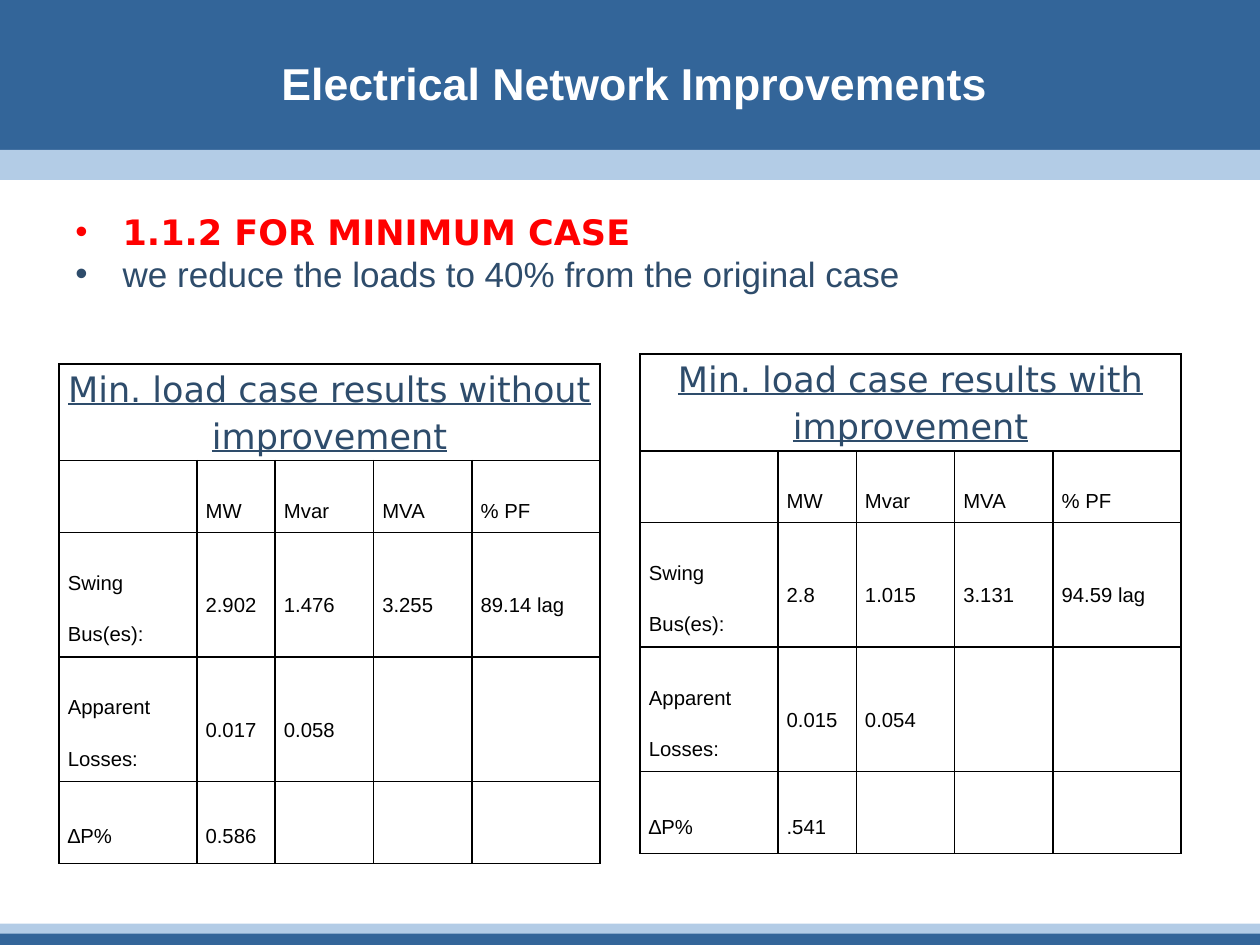
from lxml.etree import SubElement
from pptx import Presentation
from pptx.dml.color import RGBColor
from pptx.enum.shapes import MSO_SHAPE
from pptx.enum.text import MSO_ANCHOR, MSO_AUTO_SIZE, PP_ALIGN
from pptx.oxml.ns import qn
from pptx.util import Pt

COLORS = {
    "band": "336599",
    "stripe": "B3CCE6",
    "white": "FFFFFF",
    "alert": "FF0000",
    "navy": "2E4C6B",
    "black": "000000",
}
TITLE_FONT = {"name": "Arial", "size": Pt(44), "bold": True}
HEADING_FONT = {"name": "DejaVu Sans", "size": Pt(20), "bold": True}
BODY_FONT = {"name": "Arial", "size": Pt(20), "bold": False}
CAPTION_FONT = {"name": "DejaVu Sans", "size": Pt(20), "bold": False, "underline": True}
CELL_FONT = {"name": "Arial", "size": Pt(20), "bold": False}
SPACED = {"line_spacing": 1.15, "space_before": Pt(24)}
CELL_FORMAT = {
    "margin_left": Pt(5),
    "margin_right": Pt(5),
    "margin_top": 0,
    "margin_bottom": 0,
    "vertical_anchor": MSO_ANCHOR.MIDDLE,
}
COLUMN_WIDTHS = [78.7, 44.8, 56.2, 56.2, 73.2]
ROW_HEIGHTS = [41, 41, 71.1, 71.1, 47]
HEADINGS = ["", "MW", "Mvar", "MVA", "% PF"]
ROW_LABELS = ["Swing Bus(es):", "Apparent Losses:", "∆P%"]


def apply(target, values):
    for name, value in values.items():
        setattr(target, name, value)


def write(paragraph, text, font, color, lowered=False):
    """Add a run; lowered text is a subscript, drawn smaller and below the line."""
    run = paragraph.add_run()
    run.text = text
    apply(run.font, font)
    run.font.color.rgb = RGBColor.from_string(COLORS[color])
    if lowered:
        run.font._element.set("baseline", "-25000")


def add_bands(slide, width, height):
    bands = [
        (0, 94.3, "band"),
        (height - 9.4, 9.4, "band"),
        (85.7, 17.1, "stripe"),
        (height - 12.2, 5.7, "stripe"),
    ]
    for top, thickness, color in bands:
        band = slide.shapes.add_shape(
            MSO_SHAPE.RECTANGLE, 0, Pt(top), Pt(width), Pt(thickness))
        band.shadow.inherit = False
        band.fill.solid()
        band.fill.fore_color.rgb = RGBColor.from_string(COLORS[color])
        band.line.fill.background()


def place_title(slide, left, top, width, height, text):
    title = slide.shapes.title
    apply(title, {"left": Pt(left), "top": Pt(top), "width": Pt(width), "height": Pt(height)})
    apply(title.text_frame, {
        "vertical_anchor": MSO_ANCHOR.MIDDLE,
        "word_wrap": True,
        "auto_size": MSO_AUTO_SIZE.NONE,
    })
    paragraph = title.text_frame.paragraphs[0]
    paragraph.alignment = PP_ALIGN.CENTER
    write(paragraph, text, TITLE_FONT, "white", lowered=True)
    slide.shapes._spTree.append(title._element)  # in front of the bands


def add_bullets(slide, left, top, width, height, items):
    box = slide.shapes.add_textbox(Pt(left), Pt(top), Pt(width), Pt(height))
    frame = box.text_frame
    frame.word_wrap = True
    for index, (text, font, color) in enumerate(items):
        paragraph = frame.add_paragraph() if index else frame.paragraphs[0]
        properties = paragraph._p.get_or_add_pPr()
        properties.set("marL", str(Pt(27)))
        properties.set("indent", str(-Pt(27)))
        SubElement(properties, qn("a:buFont"), typeface="Arial")
        SubElement(properties, qn("a:buChar"), char="•")
        write(paragraph, text, font, color)


def format_cell(cell):
    apply(cell, CELL_FORMAT)
    properties = cell._tc.get_or_add_tcPr()
    for side in ("a:lnL", "a:lnR", "a:lnT", "a:lnB"):
        line = SubElement(properties, qn(side), w=str(Pt(1)))
        fill = SubElement(line, qn("a:solidFill"))
        SubElement(fill, qn("a:srgbClr"), val=COLORS["black"])
    cell.fill.background()


def add_results_table(slide, left, top, caption, values):
    rows = [HEADINGS] + [[label] + row for label, row in zip(ROW_LABELS, values)]
    table = slide.shapes.add_table(
        len(ROW_HEIGHTS), len(COLUMN_WIDTHS), Pt(left), Pt(top),
        Pt(sum(COLUMN_WIDTHS)), Pt(sum(ROW_HEIGHTS))).table
    apply(table, {"first_row": False, "horz_banding": False})
    for column, width in zip(table.columns, COLUMN_WIDTHS):
        column.width = Pt(width)
    for row, height in zip(table.rows, ROW_HEIGHTS):
        row.height = Pt(height)
    for cell in table.iter_cells():
        format_cell(cell)

    header = table.cell(0, 0)
    header.merge(table.cell(0, len(COLUMN_WIDTHS) - 1))
    header.vertical_anchor = MSO_ANCHOR.TOP
    paragraph = header.text_frame.paragraphs[0]
    apply(paragraph, {**SPACED, "alignment": PP_ALIGN.CENTER})
    write(paragraph, caption, CAPTION_FONT, "navy")

    for row_index, row in enumerate(rows, start=1):
        for column_index, text in enumerate(row):
            if not text:
                continue
            paragraph = table.cell(row_index, column_index).text_frame.paragraphs[0]
            if column_index == 0 or row_index in (1, len(rows)):
                apply(paragraph, SPACED)
            write(paragraph, text, CELL_FONT, "black", lowered=True)


def main():
    presentation = Presentation()
    width, height = 720, 540
    apply(presentation, {"slide_width": Pt(width), "slide_height": Pt(height)})
    slide = presentation.slides.add_slide(presentation.slide_layouts[5])
    add_bands(slide, width, height)
    place_title(slide, 36, -11.5, 653, 88.5, "Electrical Network Improvements")
    add_bullets(slide, 36, 116.6, 653, 60, [
        ("1.1.2 FOR MINIMUM CASE", HEADING_FONT, "alert"),
        ("we reduce the loads to 40% from the original case", BODY_FONT, "navy"),
    ])
    add_results_table(slide, 33.8, 208, "Min. load case results without improvement", [
        ["2.902", "1.476", "3.255", "89.14 lag"],
        ["0.017", "0.058", "", ""],
        ["0.586", "", "", ""],
    ])
    add_results_table(slide, 365.8, 202.4, "Min. load case results with improvement", [
        ["2.8", "1.015", "3.131", "94.59 lag"],
        ["0.015", "0.054", "", ""],
        [".541", "", "", ""],
    ])
    presentation.save("out.pptx")


if __name__ == "__main__":
    main()
